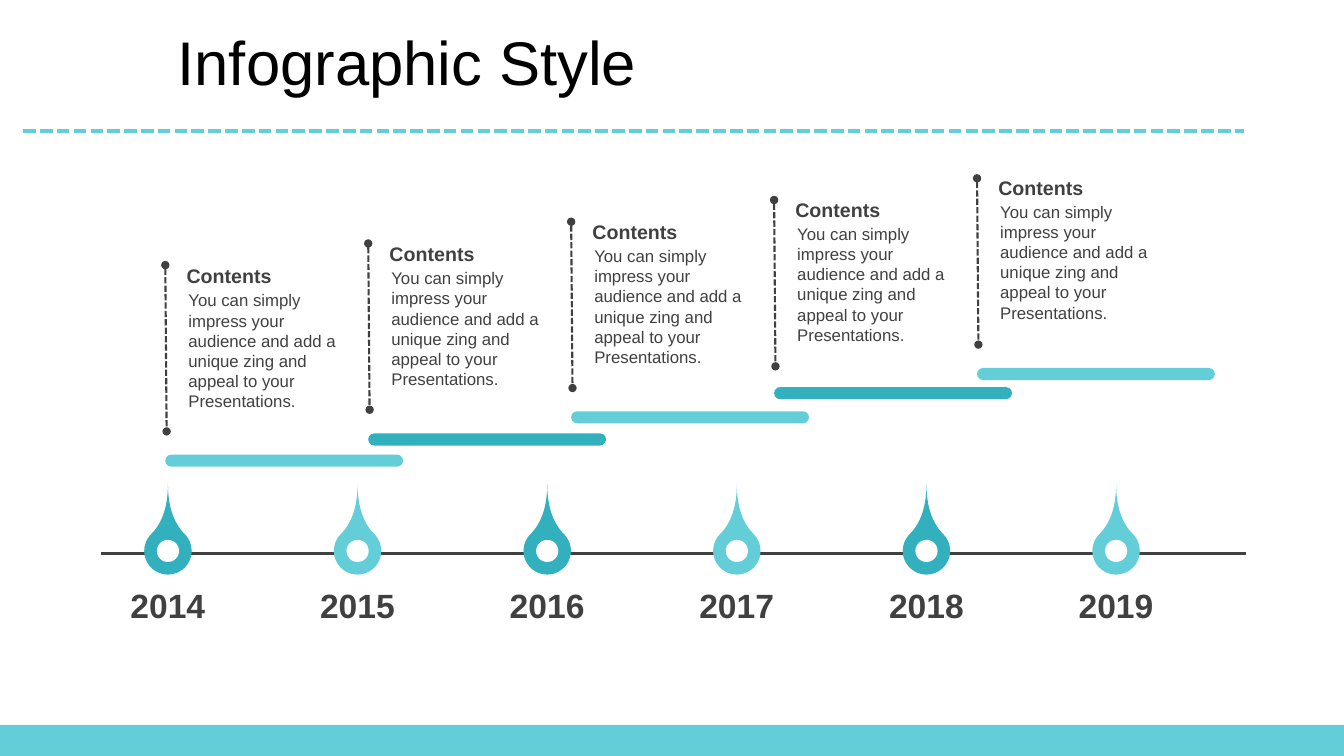
from lxml.etree import SubElement
from pptx import Presentation
from pptx.dml.color import RGBColor
from pptx.enum.dml import MSO_LINE
from pptx.enum.shapes import MSO_CONNECTOR, MSO_SHAPE
from pptx.enum.text import MSO_ANCHOR, PP_ALIGN
from pptx.oxml.ns import qn
from pptx.util import Inches, Pt

COLORS = {"light": "64CED8", "deep": "32B0BE", "dark": "404040",
          "white": "FFFFFF", "black": "000000"}
BLURB = ("You can simply impress your audience and add a unique zing "
         "and appeal to your Presentations.")

deck = Presentation()
deck.slide_width, deck.slide_height = Inches(13.333), Inches(7.5)
slide = deck.slides.add_slide(deck.slide_layouts[6])


def area(left, top, width, height):
    """Turn percentages of the slide's width and height into lengths."""
    across, down = deck.slide_width / 100, deck.slide_height / 100
    return [round(value) for value in
            (left * across, top * down, width * across, height * down)]


def style(item, color, size=None, weight=None, bold=False):
    """Format text if a size is given, a line if a weight is, else a fill."""
    rgb = RGBColor.from_string(COLORS[color])
    if size:
        item.text_frame.word_wrap = True
        for run in item.text_frame.paragraphs[0].runs:
            run.font.name, run.font.size = "Arial", Pt(size)
            run.font.bold, run.font.color.rgb = bold, rgb
    elif weight:
        item.line.color.rgb, item.line.width = rgb, Pt(weight)
        SubElement(item._element.spPr, qn("a:effectLst"))
    else:
        item.shadow.inherit = False
        item.fill.solid()
        item.fill.fore_color.rgb = rgb
        item.line.fill.background()


footer = slide.shapes.add_shape(MSO_SHAPE.RECTANGLE, *area(0, 95.87, 100, 4.13))
style(footer, "light")

title = slide.shapes.add_textbox(*area(10.28, 3.47, 40.05, 10.53))
title.text_frame.text = "Infographic Style"
title.text_frame.vertical_anchor = MSO_ANCHOR.MIDDLE
heading_line = title.text_frame.paragraphs[0]
heading_line.alignment = PP_ALIGN.CENTER
heading_line.line_spacing, heading_line.space_before = 0.9, Pt(10)
style(title, "black", size=44)

# Timeline with one drop per year
timeline = slide.shapes.add_connector(
    MSO_CONNECTOR.STRAIGHT, *area(7.5, 73.2, 92.7, 73.2))
style(timeline, "dark", weight=1.75)

for column in range(6):
    center = 12.49 + 14.11 * column
    drop = slide.shapes.add_shape(
        MSO_SHAPE.TEAR, *area(center - 1.76, 69.73, 3.53, 6.27))
    drop.adjustments[0] = 2
    drop.rotation = 315
    style(drop, ("deep", "light")[column % 2])

    year = slide.shapes.add_textbox(*area(center - 4.5, 77.33, 9, 5.33))
    frame = year.text_frame
    frame.text = str(2014 + column)
    frame.margin_left = frame.margin_right = 0
    frame.margin_top = frame.margin_bottom = 0
    frame.paragraphs[0].alignment = PP_ALIGN.CENTER
    style(year, "dark", size=24, bold=True)

    hole = slide.shapes.add_shape(
        MSO_SHAPE.OVAL, *area(center - 0.82, 71.41, 1.65, 2.93))
    style(hole, "white")

# Rising steps: a bar, a text and a dashed marker each
for step, bar_top in enumerate([60.13, 57.33, 54.4, 51.2, 48.67]):
    left, rise = 12.3 + 15.1 * step, 2.93 * step
    bar = slide.shapes.add_shape(
        MSO_SHAPE.ROUNDED_RECTANGLE, *area(left, bar_top, 17.7, 1.6))
    bar.adjustments[0] = 0.5
    style(bar, ("light", "deep")[step % 2])

    note = slide.shapes.add_group_shape().shapes
    body = note.add_textbox(*area(left + 0.98, 37.73 - rise, 12.9, 17.47))
    body.text_frame.text = BLURB
    style(body, "dark", size=12)

    heading = note.add_textbox(*area(left + 0.68, 34.27 - rise, 12.98, 4.53))
    heading.text_frame.text = "Contents"
    heading.text_frame.margin_left = heading.text_frame.margin_right = Inches(0.12)
    style(heading, "dark", size=14, bold=True)

    marker_rise = 2.87 * step
    marker = note.add_connector(MSO_CONNECTOR.STRAIGHT, *area(
        left, 35.07 - marker_rise, left + 0.1, 57.07 - marker_rise))
    style(marker, "dark", weight=1.5)
    marker.line.dash_style = MSO_LINE.SQUARE_DOT
    marker_line = marker.line._get_or_add_ln()
    for end in ("a:headEnd", "a:tailEnd"):
        SubElement(marker_line, qn(end), type="oval")

divider = slide.shapes.add_connector(
    MSO_CONNECTOR.STRAIGHT, *area(1.73, 17.33, 92.55, 17.33))
style(divider, "light", weight=3)
divider.line.dash_style = MSO_LINE.SQUARE_DOT

# SQUARE_DOT is written as sysDot; the slide uses the longer sysDash
for dash in slide.shapes._spTree.iter(qn("a:prstDash")):
    dash.set("val", "sysDash")

deck.save("out.pptx")
